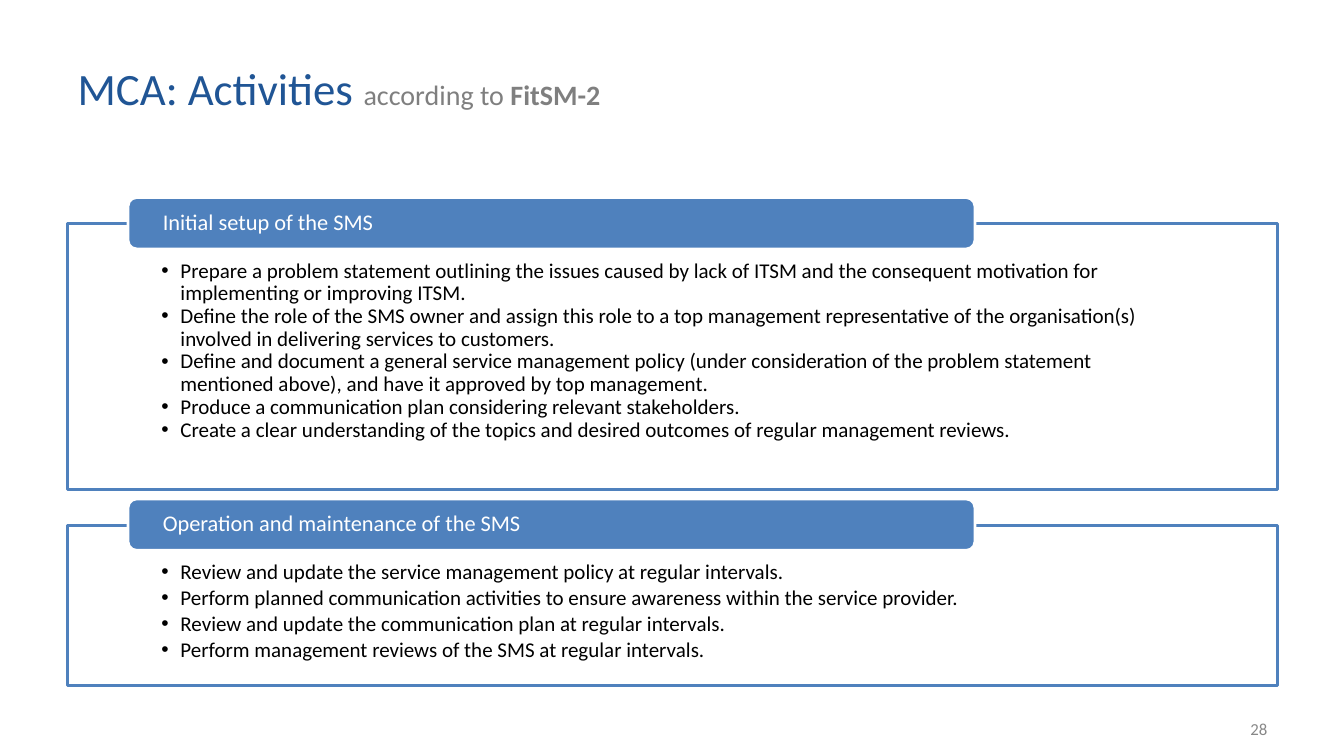
from lxml import etree
from pptx import Presentation
from pptx.dml.color import RGBColor
from pptx.enum import shapes, text
from pptx.oxml import ns
from pptx.util import Inches, Pt

TITLE_BLUE = RGBColor(0x20, 0x55, 0x95)
BLUE = RGBColor(0x4F, 0x81, 0xBD)
GREY = RGBColor(0x7F, 0x7F, 0x7F)
NUMBER_GREY = RGBColor(0x88, 0x88, 0x88)
WHITE = RGBColor(0xFF, 0xFF, 0xFF)
BLACK = RGBColor(0, 0, 0)

FONT = "Calibri"
PANEL_LEFT, PANEL_WIDTH = 0.67, 12
TAB_LEFT, TAB_WIDTH, TAB_HEIGHT, TAB_RISE = 1.27, 8.4, 0.51, 0.26

PANELS = [
    ("Initial setup of the SMS", 2.22, 2.64, 0, [
        "Prepare a problem statement outlining the issues caused by lack of ITSM "
        "and the consequent motivation for implementing or improving ITSM.",
        "Define the role of the SMS owner and assign this role to a top management "
        "representative of the organisation(s) involved in delivering services to customers.",
        "Define and document a general service management policy (under consideration "
        "of the problem statement mentioned above), and have it approved by top management.",
        "Produce a communication plan considering relevant stakeholders.",
        "Create a clear understanding of the topics and desired outcomes of regular "
        "management reviews.",
    ]),
    ("Operation and maintenance of the SMS", 5.21, 1.59, 2.4, [
        "Review and update the service management policy at regular intervals.",
        "Perform planned communication activities to ensure awareness within the "
        "service provider.",
        "Review and update the communication plan at regular intervals.",
        "Perform management reviews of the SMS at regular intervals.",
    ]),
]


def place(sp, left, top, width, height):
    sp.left, sp.top = Inches(left), Inches(top)
    sp.width, sp.height = Inches(width), Inches(height)


def format_font(font, size, color, bold=False):
    font.name = FONT
    font.size = Pt(size)
    font.color.rgb = color
    font.bold = bold


def set_frame(tf, anchor, left, top, right, bottom):
    tf.word_wrap = True
    tf.auto_size = text.MSO_AUTO_SIZE.NONE
    tf.vertical_anchor = anchor
    tf.margin_left, tf.margin_top = Inches(left), Inches(top)
    tf.margin_right, tf.margin_bottom = Inches(right), Inches(bottom)


def add_box(s, kind, left, top, width, height, fill, line):
    sp = s.shapes.add_shape(kind, Inches(left), Inches(top), Inches(width), Inches(height))
    sp.shadow.inherit = False
    sp.fill.solid()
    sp.fill.fore_color.rgb = fill
    sp.line.color.rgb = line
    sp.line.width = Pt(2)
    return sp


def set_bullet(p):
    pPr = p._p.get_or_add_pPr()
    pPr.set("marL", str(Inches(0.19)))
    pPr.set("indent", str(-Inches(0.19)))
    etree.SubElement(pPr, ns.qn("a:buFont"), typeface="Arial")
    etree.SubElement(pPr, ns.qn("a:buChar"), char="•")


def add_title(s):
    sp = s.shapes.title
    place(sp, 0.67, 0.3, 9.9, 1.14)
    tf = sp.text_frame
    set_frame(tf, text.MSO_ANCHOR.MIDDLE, 0.1, 0.05, 0.1, 0.05)
    p = tf.paragraphs[0]
    p.alignment = text.PP_ALIGN.LEFT
    for words, size, color, bold in [
        ("MCA: Activities ", 32, TITLE_BLUE, False),
        ("according to ", 20, GREY, False),
        ("FitSM-2", 20, GREY, True),
    ]:
        r = p.add_run()
        r.text = words
        format_font(r.font, size, color, bold)


def add_panel(s, heading, top, height, gap, items):
    sp = add_box(s, shapes.MSO_SHAPE.RECTANGLE, PANEL_LEFT, top, PANEL_WIDTH, height, WHITE, BLUE)
    tf = sp.text_frame
    set_frame(tf, text.MSO_ANCHOR.TOP, 0.93, 0.36, 0.93, 0.12)
    tf.text = "\n".join(items)
    for i, p in enumerate(tf.paragraphs):
        set_bullet(p)
        p.alignment = text.PP_ALIGN.LEFT
        p.line_spacing = 0.9
        p.space_before = Pt(gap if i else 0)
        format_font(p.runs[0].font, 15, BLACK)

    sp = add_box(s, shapes.MSO_SHAPE.ROUNDED_RECTANGLE, TAB_LEFT, top - TAB_RISE,
                 TAB_WIDTH, TAB_HEIGHT, BLUE, WHITE)
    tf = sp.text_frame
    set_frame(tf, text.MSO_ANCHOR.MIDDLE, 0.32, 0, 0.32, 0)
    tf.text = heading
    p = tf.paragraphs[0]
    p.alignment = text.PP_ALIGN.LEFT
    p.line_spacing = 0.9
    format_font(p.runs[0].font, 16, WHITE)


def add_slide_number(s, number):
    sp = s.shapes.add_textbox(Inches(9.56), Inches(7.03), Inches(3.11), Inches(0.4))
    tf = sp.text_frame
    set_frame(tf, text.MSO_ANCHOR.MIDDLE, 0.1, 0.05, 0.1, 0.05)
    tf.text = number
    p = tf.paragraphs[0]
    p.alignment = text.PP_ALIGN.RIGHT
    format_font(p.runs[0].font, 12, NUMBER_GREY)


def main():
    prs = Presentation()
    prs.slide_width, prs.slide_height = Inches(13.33), Inches(7.5)
    s = prs.slides.add_slide(prs.slide_layouts[5])
    add_title(s)
    for panel in PANELS:
        add_panel(s, *panel)
    add_slide_number(s, "28")
    prs.save("out.pptx")


if __name__ == "__main__":
    main()
